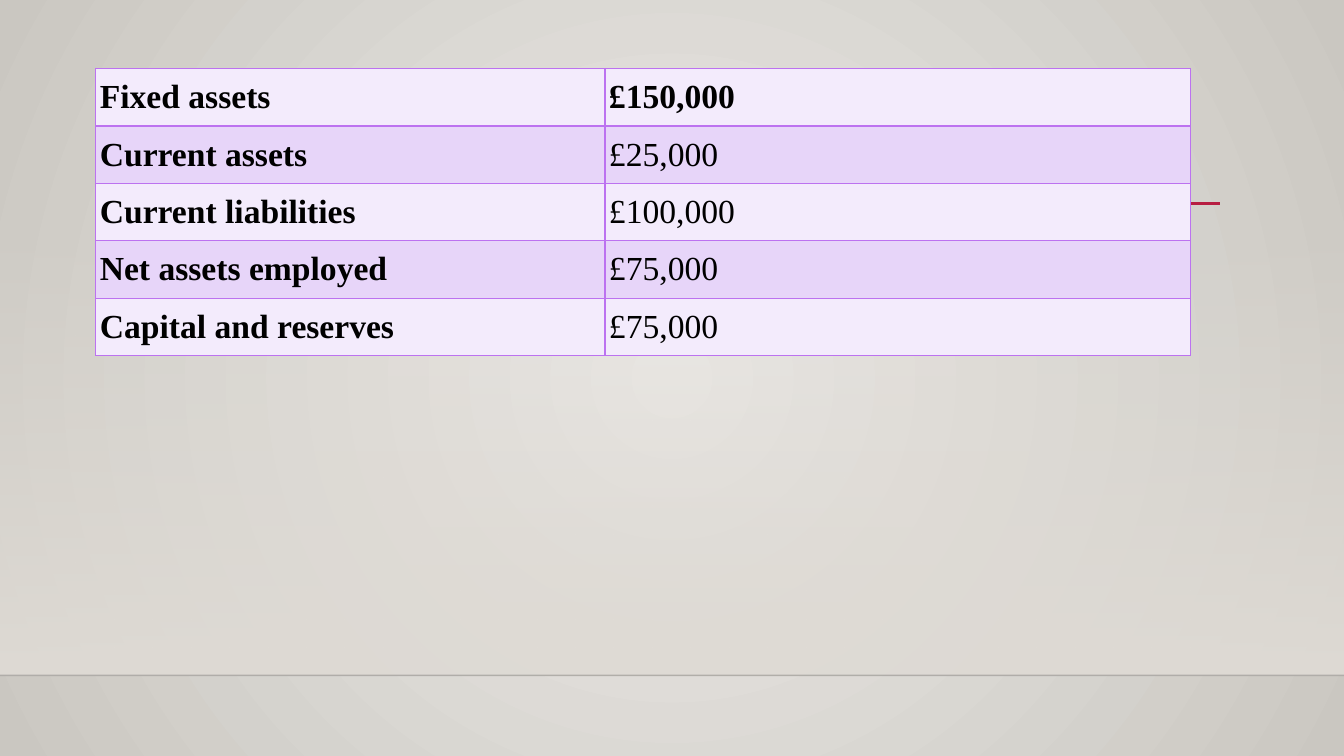
from lxml.etree import SubElement
from pptx import Presentation
from pptx.dml.color import RGBColor
from pptx.enum.shapes import MSO_CONNECTOR, MSO_SHAPE
from pptx.enum.text import MSO_ANCHOR
from pptx.oxml.ns import qn
from pptx.util import Inches, Pt


def paint(color, code, alpha=None):
    color.rgb = RGBColor.from_string(code)
    if alpha is not None:
        node = color._xFill.find(".//" + qn("a:srgbClr")) if hasattr(color, "_xFill") else None
        if node is None:
            node = color._color._xClr
        SubElement(node, qn("a:alpha"), val=str(alpha * 1000))


def rule(left, right, top, code, width, alpha=None):
    line = slide.shapes.add_connector(
        MSO_CONNECTOR.STRAIGHT, Inches(left), Inches(top), Inches(right), Inches(top))
    line.line.width = Pt(width)
    line.line.fill.solid()
    paint(line.line.fill.fore_color, code, alpha)
    SubElement(line._element.spPr, qn("a:effectLst"))


deck = Presentation()
deck.slide_width, deck.slide_height = Inches(13.33), Inches(7.5)
slide = deck.slides.add_slide(deck.slide_layouts[6])

# Radial background
back = slide.background.fill
back.gradient()
for stop, code in zip(back.gradient_stops, ("ECEAE7", "CAC7C1")):
    paint(stop.color, code)
grad = slide._element.find(".//" + qn("a:gradFill"))
grad.remove(grad.find(qn("a:lin")))
path = SubElement(grad, qn("a:path"), path="circle")
SubElement(path, qn("a:fillToRect"), l="50000", t="50000", r="50000", b="50000")

# Wall fading in towards the floor line
wall = slide.shapes.add_shape(
    MSO_SHAPE.RECTANGLE, 0, Inches(2.21), deck.slide_width, Inches(4.49))
wall.shadow.inherit = False
wall.line.fill.background()
wall.fill.gradient()
wall.fill.gradient_angle = 270
for stop, alpha in zip(wall.fill.gradient_stops, (0, 100)):
    paint(stop.color, "DFDBD5", alpha)

# Floor line and title rule
rule(0, 13.33, 6.7, "000001", 1, 20)
rule(1.59, 12.1, 2.02, "B71E42", 2.5)

# Balance sheet
rows = [
    ("Fixed assets", "£150,000"),
    ("Current assets", "£25,000"),
    ("Current liabilities", "£100,000"),
    ("Net assets employed", "£75,000"),
    ("Capital and reserves", "£75,000"),
]
table = slide.shapes.add_table(
    len(rows), 2, Inches(0.95), Inches(0.68), Inches(10.86), Inches(2.85)).table
for col, width in zip(table.columns, (5.05, 5.81)):
    col.width = Inches(width)
for r, row in enumerate(rows):
    table.rows[r].height = Inches(0.57)
    for c, text in enumerate(row):
        cell = table.cell(r, c)
        cell.text = text
        cell.vertical_anchor = MSO_ANCHOR.MIDDLE
        cell.margin_left = cell.margin_right = Inches(0.04)
        cell.margin_top = cell.margin_bottom = Inches(0.04)
        font = cell.text_frame.paragraphs[0].font
        font.name, font.size = "Times New Roman", Pt(24)
        font.bold = r == 0 or c == 0
        paint(font.color, "000000")
        # Borders come before the fill
        for side in ("lnL", "lnR", "lnT", "lnB"):
            edge = SubElement(cell._tc.tcPr, qn("a:" + side), w=str(Pt(1)))
            SubElement(SubElement(edge, qn("a:solidFill")), qn("a:srgbClr"), val="BC72F0")
        cell.fill.solid()
        paint(cell.fill.fore_color, "E7D5F9" if r % 2 else "F3EBFC")

deck.save("out.pptx")
